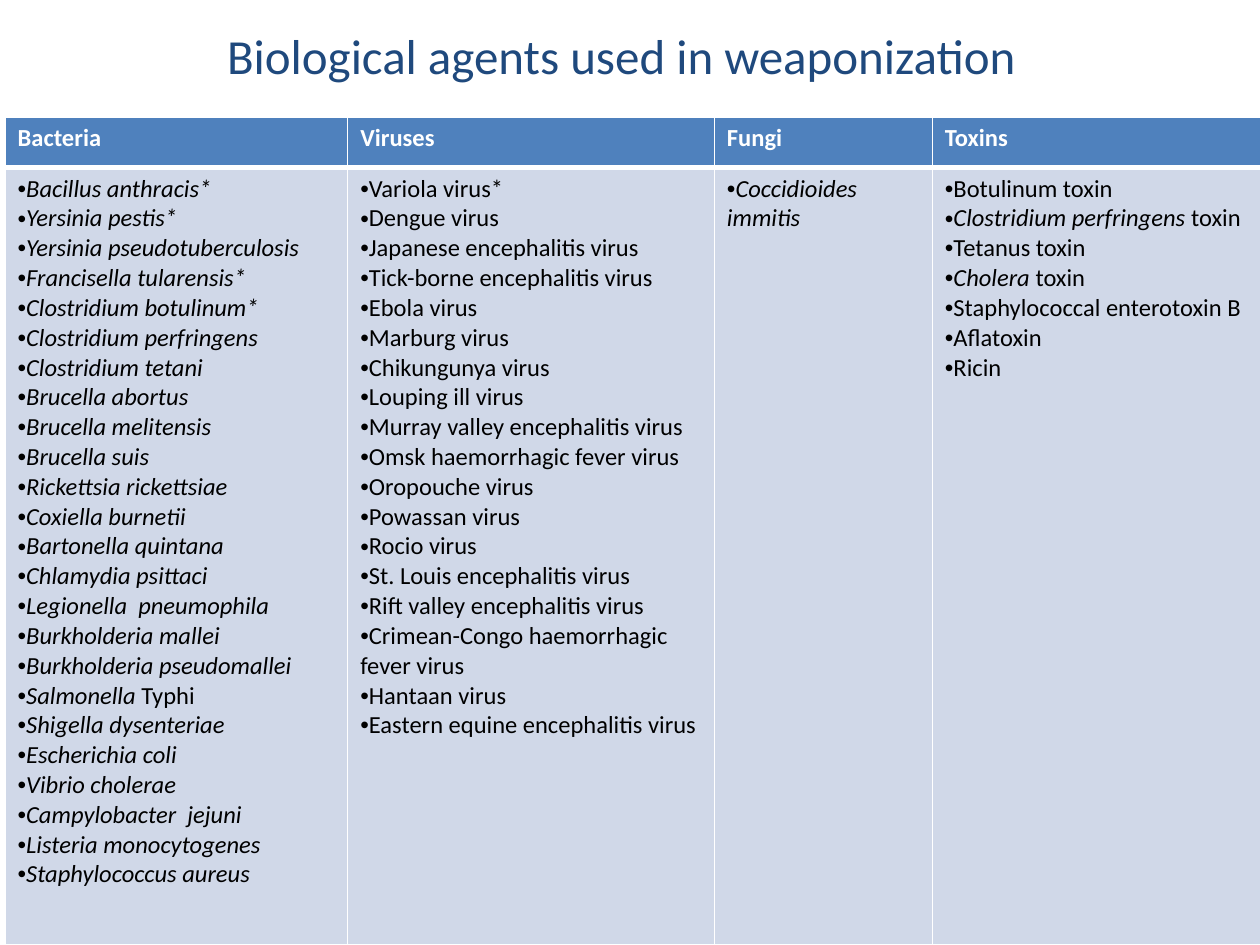
from lxml.etree import SubElement
from pptx import Presentation
from pptx.dml.color import RGBColor
from pptx.enum.text import MSO_ANCHOR, PP_ALIGN
from pptx.oxml.ns import qn
from pptx.util import Inches, Pt

COLORS = {
    "title": "1F497D",
    "header": "4F81BD",
    "body": "D0D8E8",
    "text": "000000",
    "white": "FFFFFF",
}

ITALIC_TOGGLE = "|"
COLUMNS = [
    ("Bacteria", 2.72, True, [
        "Bacillus anthracis*",
        "Yersinia pestis*",
        "Yersinia pseudotuberculosis",
        "Francisella tularensis*",
        "Clostridium botulinum*",
        "Clostridium perfringens",
        "Clostridium tetani",
        "Brucella abortus",
        "Brucella melitensis",
        "Brucella suis",
        "Rickettsia rickettsiae",
        "Coxiella burnetii",
        "Bartonella quintana",
        "Chlamydia psittaci",
        "Legionella  pneumophila",
        "Burkholderia mallei",
        "Burkholderia pseudomallei",
        "Salmonella |Typhi",
        "Shigella dysenteriae",
        "Escherichia coli",
        "Vibrio cholerae",
        "Campylobacter  jejuni",
        "Listeria monocytogenes",
        "Staphylococcus aureus",
    ]),
    ("Viruses", 2.91, False, [
        "Variola virus*",
        "Dengue virus",
        "Japanese encephalitis virus",
        "Tick-borne encephalitis virus",
        "Ebola virus",
        "Marburg virus",
        "Chikungunya virus",
        "Louping ill virus",
        "Murray valley encephalitis virus",
        "Omsk haemorrhagic fever virus",
        "Oropouche virus",
        "Powassan virus",
        "Rocio virus",
        "St. Louis encephalitis virus",
        "Rift valley encephalitis virus",
        "Crimean-Congo haemorrhagic fever virus",
        "Hantaan virus",
        "Eastern equine encephalitis virus",
    ]),
    ("Fungi", 1.73, True, ["Coccidioides immitis"]),
    ("Toxins", 2.64, False, [
        "Botulinum toxin",
        "|Clostridium perfringens |toxin",
        "Tetanus toxin",
        "|Cholera |toxin",
        "Staphylococcal enterotoxin B",
        "Aflatoxin",
        "Ricin",
    ]),
]


def add_run(para, text, size, color, bold=False, italic=False):
    span = para.add_run()
    span.text = text
    span.font.name = "Calibri"
    span.font.size = Pt(size)
    span.font.bold = bold
    span.font.italic = italic
    span.font.color.rgb = RGBColor.from_string(COLORS[color])


def style_cell(cell, fill, top, bottom):
    properties = cell._tc.get_or_add_tcPr()
    for side, width in (("L", 1), ("R", 1), ("T", top), ("B", bottom)):
        line = SubElement(properties, qn(f"a:ln{side}"), w=str(Pt(width)))
        solid = SubElement(line, qn("a:solidFill"))
        SubElement(solid, qn("a:srgbClr"), val=COLORS["white"])
    cell.fill.solid()
    cell.fill.fore_color.rgb = RGBColor.from_string(COLORS[fill])


deck = Presentation()
deck.slide_width = Inches(10)
deck.slide_height = Inches(7.5)
page = deck.slides.add_slide(deck.slide_layouts[6])

title_box = page.shapes.add_textbox(Inches(0.28), Inches(-0.19), Inches(9.3), Inches(1.25))
title_box.text_frame.word_wrap = True
title_box.text_frame.vertical_anchor = MSO_ANCHOR.MIDDLE
title = title_box.text_frame.paragraphs[0]
title.alignment = PP_ALIGN.CENTER
add_run(title, "Biological agents used in weaponization", 28, "title")

table = page.shapes.add_table(
    2, len(COLUMNS), Inches(0.04), Inches(0.93), Inches(10), Inches(6.57)
).table
table.rows[0].height = Inches(0.4)
table.rows[1].height = Inches(6.17)

for index, (heading, width, starts_italic, lines) in enumerate(COLUMNS):
    table.columns[index].width = Inches(width)
    header, body = table.cell(0, index), table.cell(1, index)
    style_cell(header, "header", 1, 3)
    style_cell(body, "body", 3, 1)
    add_run(header.text_frame.paragraphs[0], heading, 14, "white", bold=True)

    for number, line in enumerate(lines):
        frame = body.text_frame
        para = frame.add_paragraph() if number else frame.paragraphs[0]
        properties = para._p.get_or_add_pPr()
        SubElement(properties, qn("a:buFont"), typeface="Arial")
        SubElement(properties, qn("a:buChar"), char="•")
        italic = starts_italic
        for piece in line.split(ITALIC_TOGGLE):
            if piece:
                add_run(para, piece, 14, "text", italic=italic)
            italic = not italic

deck.save("out.pptx")
